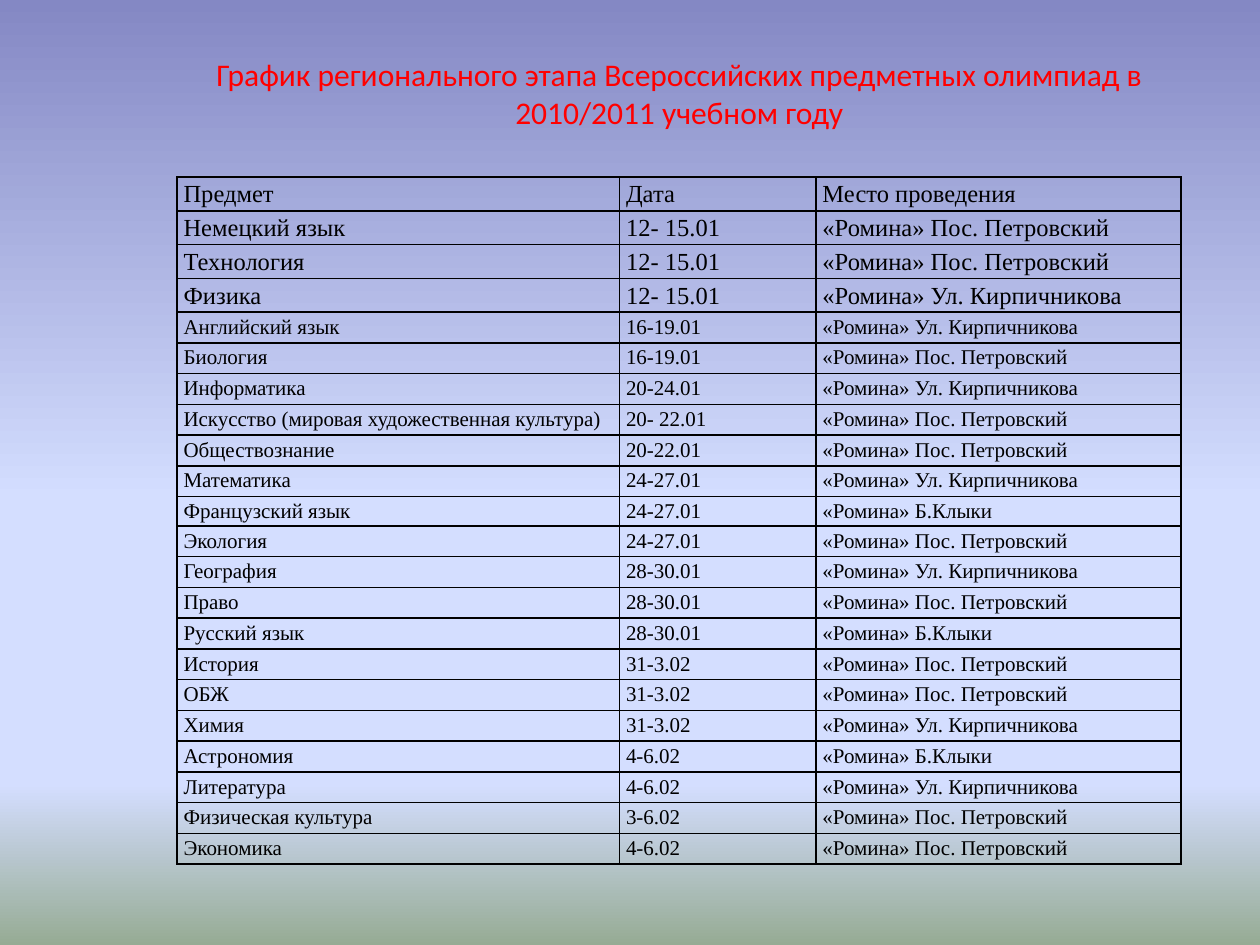
import copy
import pptx
import pptx.util
import pptx.dml.color
import pptx.enum.text
import pptx.oxml
import pptx.oxml.ns

Cm = pptx.util.Cm
Pt = pptx.util.Pt
RGBColor = pptx.dml.color.RGBColor

RED = RGBColor(0xFF, 0x00, 0x00)
BLACK = RGBColor(0x00, 0x00, 0x00)
VIOLET = RGBColor(0x84, 0x88, 0xC4)
SKY = RGBColor(0xD4, 0xDE, 0xFF)
GREEN = RGBColor(0x96, 0xAB, 0x94)

HILL = "«Ромина» Пос. Петровский"
BRICK = "«Ромина» Ул. Кирпичникова"
LAKE = "«Ромина» Б.Клыки"

ROWS = [
    ("Предмет", "Дата", "Место проведения"),
    ("Немецкий язык", "12- 15.01", HILL),
    ("Технология", "12- 15.01", HILL),
    ("Физика", "12- 15.01", BRICK),
    ("Английский язык", "16-19.01", BRICK),
    ("Биология", "16-19.01", HILL),
    ("Информатика", "20-24.01", BRICK),
    ("Искусство (мировая художественная культура)", "20- 22.01", HILL),
    ("Обществознание", "20-22.01", HILL),
    ("Математика", "24-27.01", BRICK),
    ("Французский язык", "24-27.01", LAKE),
    ("Экология", "24-27.01", HILL),
    ("География", "28-30.01", BRICK),
    ("Право", "28-30.01", HILL),
    ("Русский язык", "28-30.01", LAKE),
    ("История", "31-3.02", HILL),
    ("ОБЖ", "31-3.02", HILL),
    ("Химия", "31-3.02", BRICK),
    ("Астрономия", "4-6.02", LAKE),
    ("Литература", "4-6.02", BRICK),
    ("Физическая культура", "3-6.02", HILL),
    ("Экономика", "4-6.02", HILL),
]
WIDTHS = [8.92, 3.96, 7.36]
LARGE = 4
HEIGHTS = [0.68] * LARGE + [0.62] * (len(ROWS) - LARGE)
HEIGHTS[10] = 0.59


def style(par, face, size, color):
    par.font.name = face
    par.font.size = Pt(size)
    par.font.color.rgb = color


def border(cell):
    props = cell._tc.get_or_add_tcPr()
    for side in "LRTB":
        props.append(pptx.oxml.parse_xml(
            f'<a:ln{side} {pptx.oxml.ns.nsdecls("a")} w="{Pt(1)}">'
            f'<a:solidFill><a:srgbClr val="{BLACK}"/></a:solidFill></a:ln{side}>'))


deck = pptx.Presentation()
deck.slide_width = Cm(25.4)
deck.slide_height = Cm(19.05)
slide = deck.slides.add_slide(deck.slide_layouts[5])

fill = slide.background.fill
fill.gradient()
fill.gradient_angle = 270
first = slide.element.xpath(".//p:bg//a:gs")[0]
for _ in range(2):
    first.addnext(copy.deepcopy(first))
shades = [(0, VIOLET), (0.53, SKY), (0.83, SKY), (1, GREEN)]
for stop, (place, shade) in zip(fill.gradient_stops, shades):
    stop.position = place
    stop.color.rgb = shade

title = slide.shapes.title
title.left, title.top = Cm(3.37), Cm(0.98)
title.width, title.height = Cm(20.65), Cm(1.78)
frame = title.text_frame
frame.text = "График регионального этапа Всероссийских предметных олимпиад в 2010/2011 учебном году"
frame.word_wrap = True
frame.auto_size = pptx.enum.text.MSO_AUTO_SIZE.NONE
frame.vertical_anchor = pptx.enum.text.MSO_ANCHOR.TOP
frame.paragraphs[0].alignment = pptx.enum.text.PP_ALIGN.CENTER
style(frame.paragraphs[0], "Calibri", 18, RED)

table = slide.shapes.add_table(
    len(ROWS), len(WIDTHS), Cm(3.57), Cm(3.57), Cm(sum(WIDTHS)), Cm(sum(HEIGHTS))).table
table.first_row = False
table.horz_banding = False
for col, width in zip(table.columns, WIDTHS):
    col.width = Cm(width)

for i, texts in enumerate(ROWS):
    table.rows[i].height = Cm(HEIGHTS[i])
    for j, text in enumerate(texts):
        cell = table.cell(i, j)
        cell.text = text
        cell.margin_left = cell.margin_right = Cm(0.13)
        cell.margin_top = cell.margin_bottom = 0
        border(cell)
        cell.fill.background()
        par = cell.text_frame.paragraphs[0]
        par.line_spacing = 1.15
        style(par, "Times New Roman", 14 if i < LARGE else 12, BLACK)

deck.save("out.pptx")
